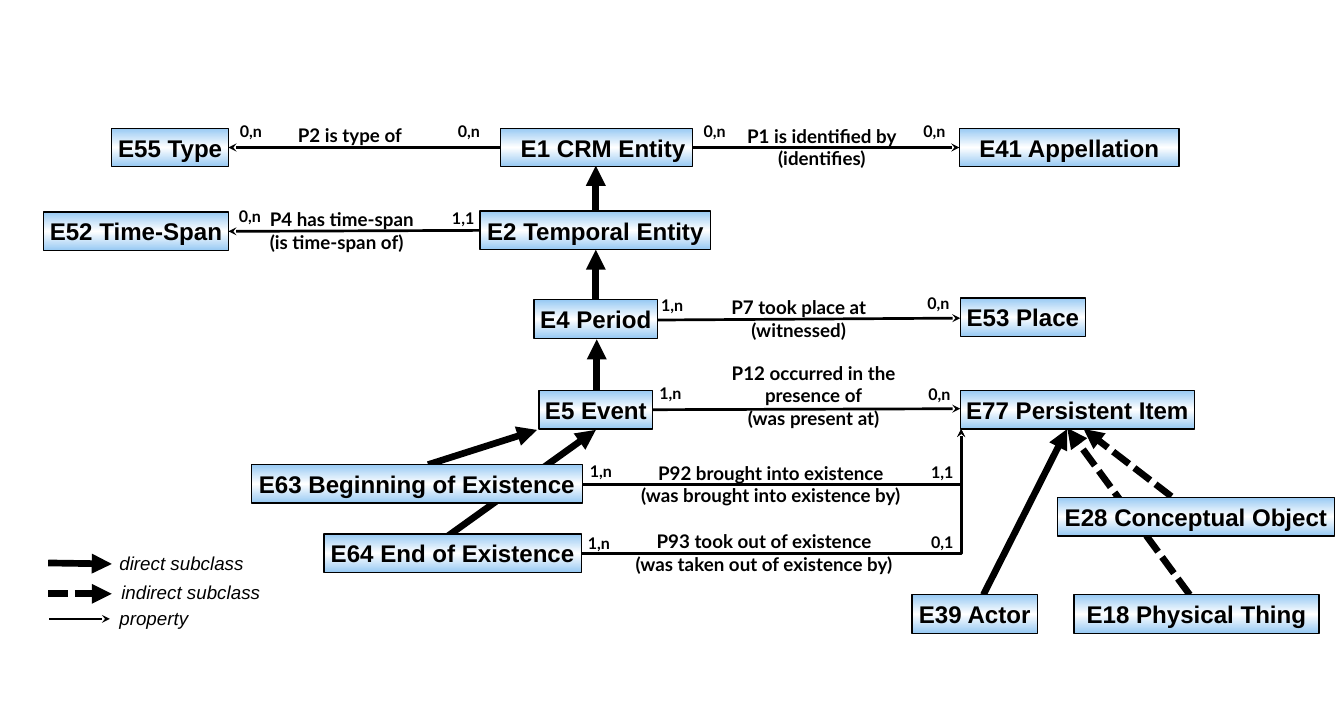
import copy
from dataclasses import dataclass
from typing import NamedTuple

import lxml.etree
import pptx
import pptx.dml.color
import pptx.enum.dml
import pptx.enum.shapes
import pptx.enum.text
import pptx.oxml.ns
import pptx.slide
import pptx.text.text
import pptx.util

Inches = pptx.util.Inches
RGB = pptx.dml.color.RGBColor
Align = pptx.enum.text.PP_ALIGN
Route = pptx.enum.shapes.MSO_CONNECTOR
qn = pptx.oxml.ns.qn


class TextStyle(NamedTuple):
    font: str
    size: int
    bold: bool
    italic: bool
    align: Align


@dataclass(frozen=True)
class Theme:
    ink: RGB = RGB(0x00, 0x00, 0x00)
    edge: RGB = RGB(0x97, 0xC9, 0xF3)
    middle: RGB = RGB(0xFF, 0xFF, 0xFF)
    entity: TextStyle = TextStyle("Arial", 18, True, False, Align.CENTER)
    relation: TextStyle = TextStyle("Lato", 14, True, False, Align.CENTER)
    relation_left: TextStyle = TextStyle("Lato", 14, True, False, Align.LEFT)
    cardinality: TextStyle = TextStyle("Lato", 12, True, False, Align.LEFT)
    legend: TextStyle = TextStyle("Arial", 14, False, True, Align.LEFT)


class LinkKind(NamedTuple):
    width: int
    arrowhead: str
    dashed: bool = False
    route: Route = Route.STRAIGHT


class Entity(NamedTuple):
    name: str
    left: float
    top: float
    width: float
    inset_left: float = 0.06


class Link(NamedTuple):
    kind: LinkKind
    start: tuple[float, float]
    end: tuple[float, float]


class Label(NamedTuple):
    text: str
    left: float
    top: float
    width: float
    height: float
    style: TextStyle


THEME = Theme()
ENTITY_HEIGHT = 0.4
DIRECT = LinkKind(5, "triangle")
INDIRECT = LinkKind(5, "triangle", dashed=True)
PROPERTY = LinkKind(2, "stealth")
BENT_PROPERTY = LinkKind(2, "stealth", route=Route.ELBOW)

ENTITIES = [
    Entity("E55 Type", 1.16, 1.33, 1.21),
    Entity("E1 CRM Entity", 5.19, 1.33, 1.99, inset_left=0.2),
    Entity("E41 Appellation", 9.95, 1.33, 2.28),
    Entity("E52 Time-Span", 0.45, 2.2, 1.92),
    Entity("E2 Temporal Entity", 4.98, 2.19, 2.39),
    Entity("E4 Period", 5.54, 3.11, 1.28),
    Entity("E53 Place", 9.96, 3.09, 1.3),
    Entity("E5 Event", 5.59, 4.05, 1.18),
    Entity("E77 Persistent Item", 9.96, 4.05, 2.43),
    Entity("E63 Beginning of Existence", 2.61, 4.82, 3.43),
    Entity("E64 End of Existence", 3.36, 5.54, 2.67),
    Entity("E28 Conceptual Object", 10.97, 5.16, 2.87),
    Entity("E39 Actor", 9.46, 6.17, 1.3),
    Entity("E18 Physical Thing", 11.14, 6.17, 2.54),
]

LINKS = [
    Link(DIRECT, (6.18, 2.4), (6.18, 1.72)),
    Link(DIRECT, (6.18, 3.11), (6.18, 2.59)),
    Link(DIRECT, (6.19, 4.05), (6.19, 3.52)),
    Link(DIRECT, (4.44, 4.82), (5.57, 4.46)),
    Link(DIRECT, (4.59, 5.6), (6.18, 4.46)),
    Link(DIRECT, (10.2, 6.17), (11.07, 4.45)),
    Link(INDIRECT, (12.34, 6.17), (11.07, 4.44)),
    Link(INDIRECT, (12.15, 5.15), (11.24, 4.45)),
    Link(PROPERTY, (5.19, 1.53), (2.37, 1.53)),
    Link(PROPERTY, (7.17, 1.53), (9.95, 1.53)),
    Link(PROPERTY, (4.98, 2.39), (2.37, 2.4)),
    Link(PROPERTY, (6.82, 3.32), (9.96, 3.3)),
    Link(PROPERTY, (6.77, 4.25), (9.96, 4.24)),
    Link(BENT_PROPERTY, (6.04, 5.03), (9.97, 4.45)),
    Link(BENT_PROPERTY, (6.03, 5.74), (9.97, 4.45)),
    Link(DIRECT, (0.5, 5.84), (1.16, 5.85)),
    Link(INDIRECT, (0.5, 6.16), (1.16, 6.16)),
    Link(PROPERTY, (0.51, 6.42), (1.14, 6.42)),
]

RELATIONS = [
    Label("P2 is type of", 2.99, 1.23, 1.59, 0.34, THEME.relation_left),
    Label("P1 is identified by\n(identifies)", 7.54, 1.24, 1.97, 0.57, THEME.relation),
    Label("P4 has time-span\n(is time-span of)", 2.7, 2.11, 2.45, 0.57, THEME.relation_left),
    Label("P7 took place at\n(witnessed)", 7.38, 3.02, 1.81, 0.57, THEME.relation),
    Label("P12 occurred in the presence of\n(was present at)", 7.36, 3.7, 2.16, 0.81, THEME.relation),
    Label("P92 brought into existence\n(was brought into existence by)", 6.24, 4.74, 3.51, 0.57, THEME.relation),
    Label("P93 took out of existence\n(was taken out of existence by)", 6.24, 5.45, 3.37, 0.57, THEME.relation),
]

CARDINALITIES = [
    Label(text, left, top, 0.54, 0.3, THEME.cardinality)
    for text, left, top in [
        ("0,n", 2.39, 1.21), ("0,n", 4.65, 1.21), ("0,n", 7.2, 1.21), ("0,n", 9.48, 1.21),
        ("0,n", 2.38, 2.09), ("1,1", 4.59, 2.11), ("1,n", 6.76, 3.02), ("0,n", 9.52, 2.99),
        ("1,n", 6.74, 3.93), ("0,n", 9.53, 3.94), ("1,n", 6.02, 4.74), ("1,1", 9.56, 4.75),
        ("1,n", 6, 5.48), ("0,1", 9.56, 5.47),
    ]
]

LEGEND = [
    Label(text, left, top, 2, 0.34, THEME.legend)
    for text, left, top in [
        ("direct subclass", 1.14, 5.67),
        ("indirect subclass", 1.16, 5.98),
        ("property", 1.14, 6.25),
    ]
]


def write_text(frame: pptx.text.text.TextFrame, text: str, style: TextStyle) -> None:
    frame.text = text
    frame.auto_size = pptx.enum.text.MSO_AUTO_SIZE.NONE
    for paragraph in frame.paragraphs:
        paragraph.alignment = style.align
        paragraph.font.name = style.font
        paragraph.font.size = pptx.util.Pt(style.size)
        paragraph.font.bold = style.bold
        paragraph.font.italic = style.italic
        paragraph.font.color.rgb = THEME.ink


def add_entity(slide: pptx.slide.Slide, entity: Entity) -> None:
    box = slide.shapes.add_shape(
        pptx.enum.shapes.MSO_SHAPE.RECTANGLE,
        Inches(entity.left), Inches(entity.top), Inches(entity.width), Inches(ENTITY_HEIGHT),
    )
    box.shadow.inherit = False
    box.line.color.rgb = THEME.ink
    box.line.width = pptx.util.Pt(1)
    box.fill.gradient()
    box.fill.gradient_angle = 90
    stop_list = box._element.spPr.find(".//" + qn("a:gsLst"))
    stop_list.insert(1, copy.deepcopy(stop_list[0]))
    shades = [(0, THEME.edge), (0.5, THEME.middle), (1, THEME.edge)]
    for stop, (position, shade) in zip(box.fill.gradient_stops, shades):
        stop.position = position
        stop.color.rgb = shade
    frame = box.text_frame
    write_text(frame, entity.name, THEME.entity)
    frame.word_wrap = False
    frame.margin_left, frame.margin_right = Inches(entity.inset_left), Inches(0.06)


def add_link(slide: pptx.slide.Slide, link: Link) -> None:
    kind = link.kind
    arrow = slide.shapes.add_connector(kind.route, *map(Inches, link.start + link.end))
    arrow.line.color.rgb = THEME.ink
    arrow.line.width = pptx.util.Pt(kind.width)
    if kind.dashed:
        arrow.line.dash_style = pptx.enum.dml.MSO_LINE.SQUARE_DOT
    properties = arrow._element.spPr
    if kind.route == Route.ELBOW:
        properties.find(qn("a:prstGeom")).set("prst", "bentConnector2")
    lxml.etree.SubElement(properties.find(qn("a:ln")), qn("a:tailEnd"), type=kind.arrowhead)
    lxml.etree.SubElement(properties, qn("a:effectLst"))


def add_label(slide: pptx.slide.Slide, label: Label) -> None:
    area = map(Inches, (label.left, label.top, label.width, label.height))
    frame = slide.shapes.add_textbox(*area).text_frame
    write_text(frame, label.text, label.style)
    frame.word_wrap = True


def main() -> None:
    """Build the entity and property diagram and save it."""
    deck = pptx.Presentation()
    deck.slide_width, deck.slide_height = Inches(13.94), Inches(7.5)
    slide = deck.slides.add_slide(deck.slide_layouts[6])
    for link in LINKS:
        add_link(slide, link)
    for entity in ENTITIES:
        add_entity(slide, entity)
    for label in RELATIONS + CARDINALITIES + LEGEND:
        add_label(slide, label)
    deck.save("out.pptx")


if __name__ == "__main__":
    main()
